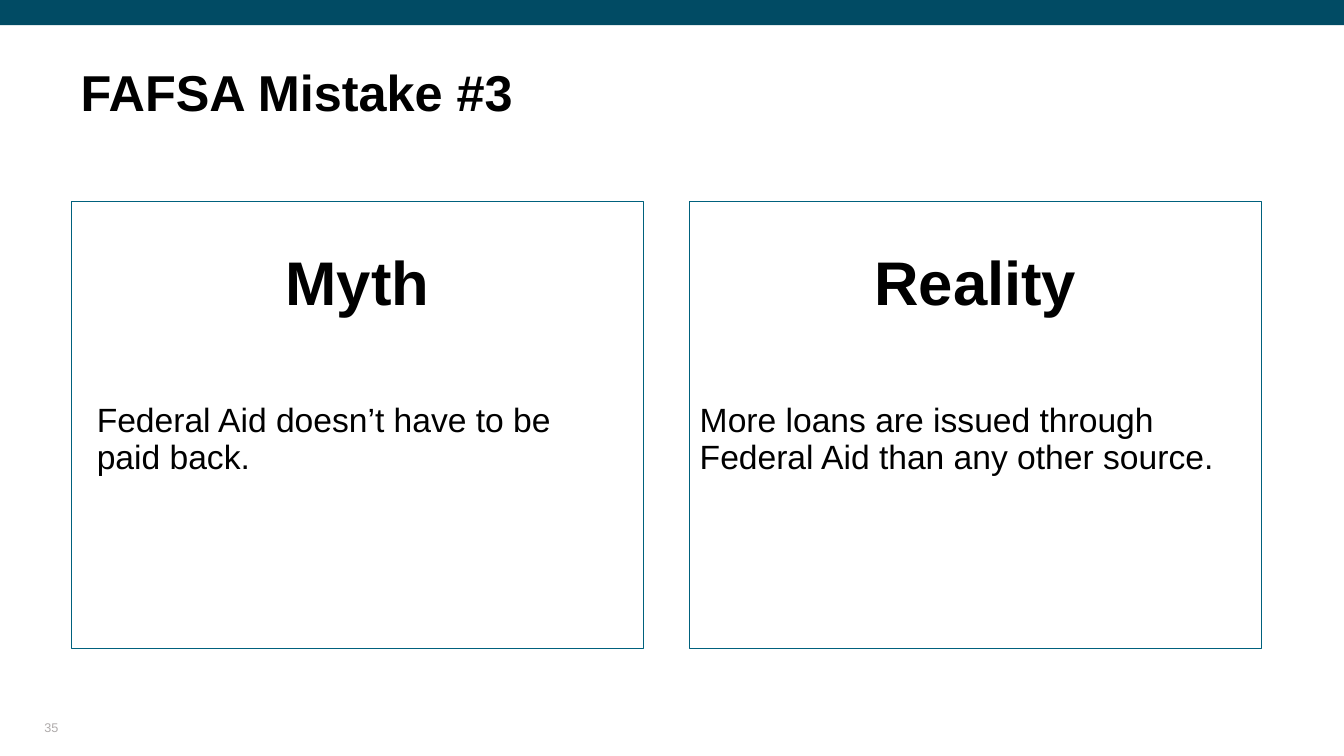
from dataclasses import dataclass

from lxml import etree
from pptx import Presentation
from pptx.dml.color import RGBColor
from pptx.enum.shapes import MSO_SHAPE
from pptx.enum.text import MSO_ANCHOR, MSO_AUTO_SIZE, PP_ALIGN
from pptx.oxml.ns import qn
from pptx.util import Inches, Pt

RECTANGLE = MSO_SHAPE.RECTANGLE
TOP, MIDDLE, BOTTOM = MSO_ANCHOR.TOP, MSO_ANCHOR.MIDDLE, MSO_ANCHOR.BOTTOM
LEFT, CENTER = PP_ALIGN.LEFT, PP_ALIGN.CENTER
NO_AUTOFIT = MSO_AUTO_SIZE.NONE
TWO_CONTENT = 3


@dataclass(frozen=True)
class Theme:
    """Colours, font and type sizes of the deck."""
    band: RGBColor = RGBColor.from_string("014B64")
    border: RGBColor = RGBColor.from_string("00617D")
    ink: RGBColor = RGBColor.from_string("000000")
    muted: RGBColor = RGBColor.from_string("AFABAB")
    font: str = "Arial"
    title: float = 36
    heading: float = 44
    body: float = 24
    number: float = 9


THEME = Theme()


def place(shape, box):
    """Move a shape to a box of left, top, width and height in inches."""
    shape.left, shape.top, shape.width, shape.height = map(Inches, box)


def set_frame(shape, insets, anchor):
    """Set wrapping, insets and anchor, and return the text frame."""
    frame = shape.text_frame
    frame.word_wrap = True
    frame.auto_size = NO_AUTOFIT
    frame.vertical_anchor = anchor
    (frame.margin_left, frame.margin_top,
     frame.margin_right, frame.margin_bottom) = map(Inches, insets)
    return frame


def add_span(para, text, size, color, bold=False):
    """Add one formatted run to a paragraph."""
    span = para.add_run()
    span.text = text
    span.font.name = THEME.font
    span.font.size = Pt(size)
    span.font.bold = bold
    span.font.color.rgb = color


def format_plain(para, align, space_before=0):
    """Remove the bullet and indent and set the paragraph spacing."""
    props = para._p.get_or_add_pPr()
    props.set("marL", "0")
    props.set("indent", "0")
    etree.SubElement(props, qn("a:buNone"))
    para.alignment = align
    para.line_spacing = 0.9
    para.space_before = Pt(space_before)


def add_band(page, box):
    """Draw the coloured band along the top edge."""
    band = page.shapes.add_shape(RECTANGLE, *map(Inches, box))
    band.shadow.inherit = False
    band.fill.solid()
    band.fill.fore_color.rgb = THEME.band
    band.line.fill.background()


def fill_title(page, box, text):
    """Place and write the slide title."""
    title = page.shapes.title
    place(title, box)
    para = set_frame(title, (0.1, 0.05, 0.1, 0.05), MIDDLE).paragraphs[0]
    para.alignment = LEFT
    add_span(para, text, THEME.title, THEME.ink, True)


def fill_panel(panel, box, side_inset, heading, statement):
    """Place an outlined panel with a heading and a statement."""
    place(panel, box)
    panel.line.color.rgb = THEME.border
    panel.line.width = Pt(0.75)
    frame = set_frame(panel, (side_inset, 0.5, side_inset, 0.05), TOP)
    para = frame.paragraphs[0]
    format_plain(para, CENTER)
    add_span(para, heading, THEME.heading, THEME.ink, True)
    para = frame.add_paragraph()
    format_plain(para, LEFT, 61)
    add_span(para, statement, THEME.body, THEME.ink)


def add_page_number(page, box, number):
    """Write the page number at the foot of the slide."""
    label = page.shapes.add_textbox(*map(Inches, box))
    para = set_frame(label, (0, 0, 0, 0), BOTTOM).paragraphs[0]
    add_span(para, number, THEME.number, THEME.muted)


def build_comparison(deck):
    """Build the slide that sets the myth beside the reality."""
    page = deck.slides.add_slide(deck.slide_layouts[TWO_CONTENT])
    add_band(page, (0, 0, 13.33, 0.25))
    fill_title(page, (0.7, 0.55, 5.5, 0.71), "FAFSA Mistake #3")
    panels = (
        (0.25, "Myth", "Federal Aid doesn’t have to be paid back."),
        (0.1, "Reality",
         "More loans are issued through Federal Aid than any other source."),
    )
    width, gap = 5.67, 0.46
    for index, content in enumerate(panels):
        box = (0.71 + index * (width + gap), 2, width, 4.43)
        fill_panel(page.placeholders[index + 1], box, *content)
    add_page_number(page, (0.44, 7.05, 3, 0.24), "35")


def main():
    """Create and save the deck."""
    deck = Presentation()
    deck.slide_width, deck.slide_height = Inches(13.33), Inches(7.5)
    build_comparison(deck)
    deck.save("out.pptx")


if __name__ == "__main__":
    main()
